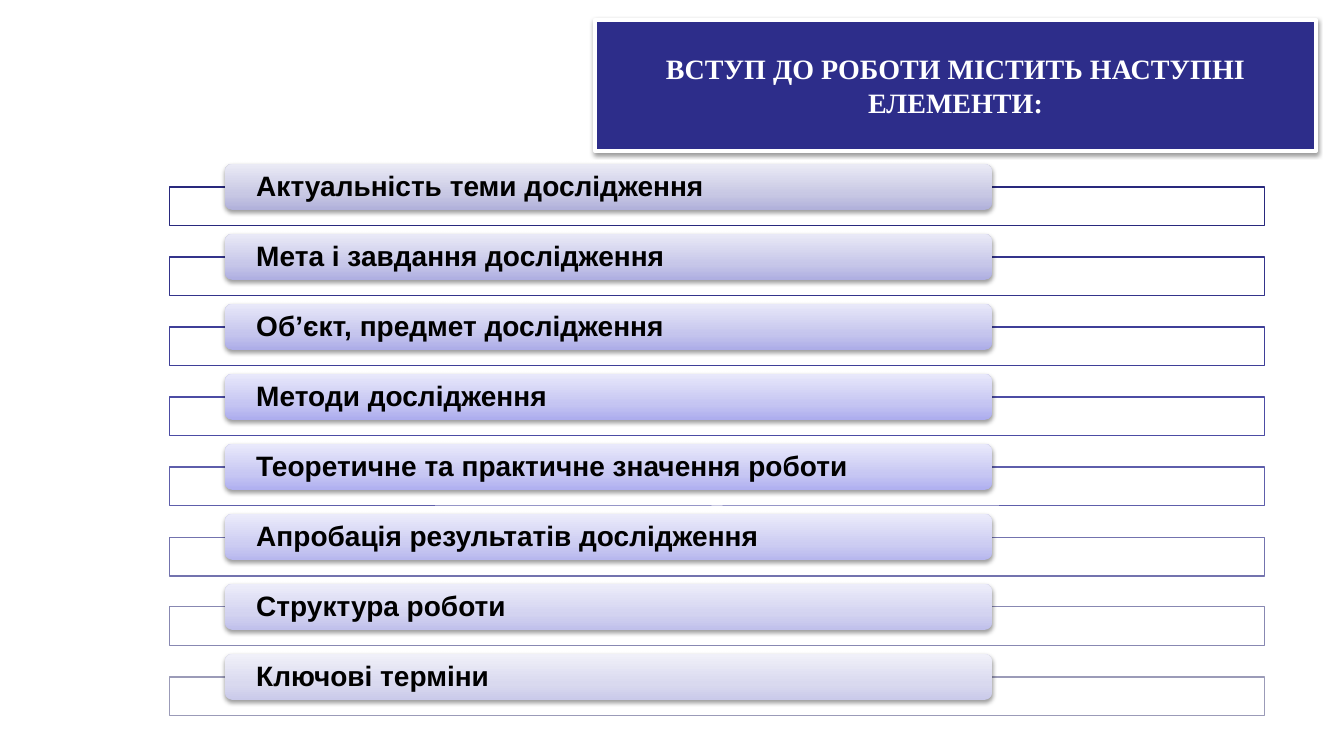
from dataclasses import dataclass

from lxml.etree import SubElement
from pptx import Presentation
from pptx.dml.color import RGBColor
from pptx.enum.shapes import MSO_SHAPE as Shape
from pptx.enum.text import MSO_ANCHOR as Anchor, MSO_AUTO_SIZE as AutoSize, PP_ALIGN as Align
from pptx.oxml import parse_xml
from pptx.oxml.ns import nsdecls, qn
from pptx.util import Emu, Pt

PX_PER_INCH = 100.8
ROW_STEP = 70


@dataclass
class Box:
    x: int
    y: int
    w: int
    h: int


@dataclass
class Item:
    text: str
    line: str
    stops: tuple[str, str, str]


TITLE = "ВСТУП ДО РОБОТИ МІСТИТЬ НАСТУПНІ ЕЛЕМЕНТИ:"
TITLE_BOX = Box(595, 20, 721, 131)
FRAME = Box(169, 187, 1096, 39)
BAR = Box(225, 164, 767, 46)

ITEMS = [
    Item("Актуальність теми дослідження", "29297D", ("B0B0DA", "C8C8E4", "EAEAF5")),
    Item("Мета і завдання дослідження", "34348B", ("AEAEE1", "C7C7E9", "E9E9F7")),
    Item("Об’єкт, предмет дослідження", "3F3F98", ("ACACE8", "C5C5ED", "E8E8F9")),
    Item("Методи дослідження", "4C4CA4", ("ACACEE", "C5C5F2", "E8E8FB")),
    Item("Теоретичне та практичне значення роботи", "5E5EAB", ("AFAFF0", "C7C7F3", "E9E9FB")),
    Item("Апробація результатів дослідження", "7373AE", ("B7B7EE", "CDCDF2", "EBEBFB")),
    Item("Структура роботи", "8888B2", ("C0C0EB", "D3D3F0", "EDEDFA")),
    Item("Ключові терміни", "9B9BB8", ("CACAEA", "D9D9EF", "F0F0F9")),
]


def px(n: int) -> Emu:
    return Emu(round(n * 914400 / PX_PER_INCH))


def color(hex_value: str) -> RGBColor:
    return RGBColor.from_string(hex_value)


def place(sp, box: Box) -> None:
    sp.left, sp.top, sp.width, sp.height = px(box.x), px(box.y), px(box.w), px(box.h)


def add_box(s, kind, box: Box, dy: int):
    sp = s.shapes.add_shape(kind, px(box.x), px(box.y + dy), px(box.w), px(box.h))
    sp.shadow.inherit = False
    return sp


def set_outline(sp, hex_value: str, width: float) -> None:
    sp.line.color.rgb = color(hex_value)
    sp.line.width = Pt(width)


def add_shadow(sp) -> None:
    sp.shadow.inherit = False
    effects = sp._element.spPr.find(qn("a:effectLst"))
    effects.append(parse_xml(
        f'<a:outerShdw {nsdecls("a")} blurRad="40000" dist="20000" dir="5400000" rotWithShape="0">'
        '<a:srgbClr val="000000"><a:alpha val="38000"/></a:srgbClr></a:outerShdw>'))


def set_gradient(sp, stops: tuple[str, str, str]) -> None:
    sp.fill.gradient()
    sp.fill.gradient_angle = 90
    gs_list = sp._element.spPr.find(qn("a:gradFill")).find(qn("a:gsLst"))
    for gs in list(gs_list):
        gs_list.remove(gs)
    for pos, hex_value in zip((0, 35, 100), stops):
        gs = SubElement(gs_list, qn("a:gs"), pos=str(pos * 1000))
        SubElement(gs, qn("a:srgbClr"), val=hex_value)


def set_text(sp, text: str, font: str, hex_value: str, align: Align):
    tf = sp.text_frame
    tf.text = text
    tf.word_wrap = True
    tf.auto_size = AutoSize.NONE
    tf.vertical_anchor = Anchor.MIDDLE
    p = tf.paragraphs[0]
    p.alignment = align
    r = p.runs[0]
    r.font.name, r.font.size, r.font.bold = font, Pt(20), True
    r.font.color.rgb = color(hex_value)
    return tf


def draw_title(sp) -> None:
    place(sp, TITLE_BOX)
    sp._element.spPr.find(qn("a:xfrm")).addnext(parse_xml(
        f'<a:prstGeom {nsdecls("a")} prst="round2DiagRect"><a:avLst>'
        '<a:gd name="adj1" fmla="val 50000"/><a:gd name="adj2" fmla="val 0"/>'
        '</a:avLst></a:prstGeom>'))
    sp.fill.solid()
    sp.fill.fore_color.rgb = color("2D2D8A")
    set_outline(sp, "FFFFFF", 3)
    add_shadow(sp)
    set_text(sp, TITLE, "Times New Roman", "FFFFFF", Align.CENTER)


def draw_item(s, item: Item, dy: int) -> None:
    # Outlined frame behind the bar
    frame = add_box(s, Shape.RECTANGLE, FRAME, dy)
    frame.fill.solid()
    frame.fill.fore_color.rgb = color("FFFFFF")
    fill_color = frame._element.spPr.find(qn("a:solidFill"))[0]
    SubElement(fill_color, qn("a:alpha"), val="90000")
    set_outline(frame, item.line, 0.75)

    # Gradient bar with its label
    bar = add_box(s, Shape.ROUNDED_RECTANGLE, BAR, dy)
    set_gradient(bar, item.stops)
    bar.line.fill.background()
    add_shadow(bar)
    tf = set_text(bar, item.text, "Arial", "000000", Align.LEFT)
    tf.margin_left = tf.margin_right = px(29)
    tf.margin_top = tf.margin_bottom = 0
    tf.paragraphs[0].line_spacing = 0.9


def main() -> None:
    prs = Presentation()
    prs.slide_width, prs.slide_height = px(1344), px(756)
    s = prs.slides.add_slide(prs.slide_layouts[5])
    draw_title(s.shapes.title)
    for i, item in enumerate(ITEMS):
        draw_item(s, item, i * ROW_STEP)
    prs.save("out.pptx")


if __name__ == "__main__":
    main()
